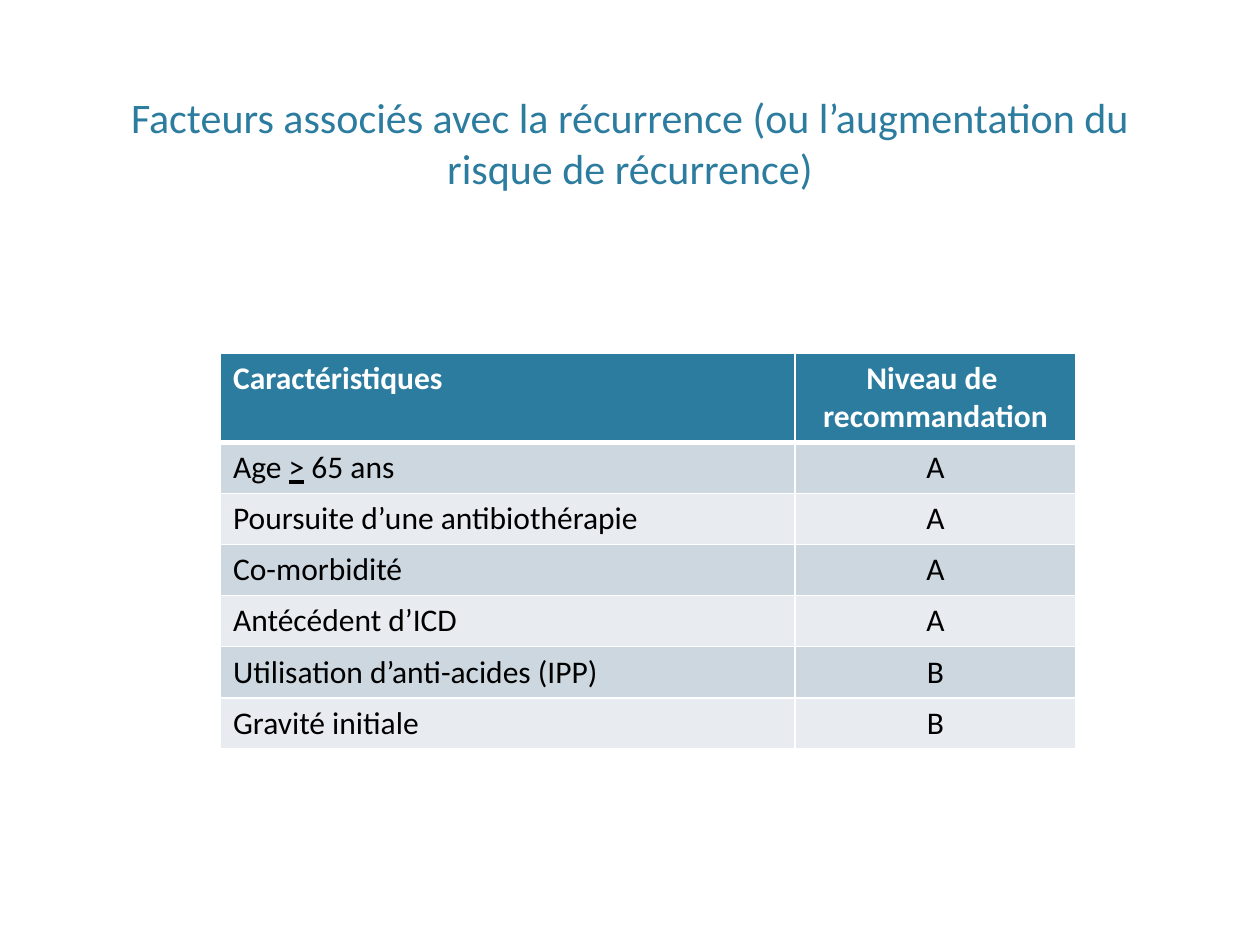
import pptx
import pptx.util
import pptx.dml.color
import pptx.enum.text
import pptx.oxml
import pptx.oxml.ns
from lxml import etree

Pt = pptx.util.Pt
Align = pptx.enum.text.PP_ALIGN
FONT = "Calibri"
COLORS = {
    "blue": "2C7C9F",
    "white": "FFFFFF",
    "black": "000000",
    "dark": "CDD7DF",
    "light": "E8ECF0",
}
HEAD = (["Caractéristiques"], ["Niveau de ", "recommandation"])
ROWS = [
    (["Age ", ">", " 65 ans"], "A"),
    (["Poursuite d’une antibiothérapie"], "A"),
    (["Co-morbidité"], "A"),
    (["Antécédent d’ICD"], "A"),
    (["Utilisation d’anti-acides (IPP)"], "B"),
    (["Gravité initiale"], "B"),
]


def rgb(name):
    return pptx.dml.color.RGBColor.from_string(COLORS[name])


def add_run(para, text, size, color, bold=False):
    run = para.add_run()
    run.text = text
    font = run.font
    font.name, font.size, font.bold = FONT, Pt(size), bold
    font.underline = text == ">"
    font.color.rgb = rgb(color)


def add_title(slide, box):
    title = slide.shapes.title
    title.left, title.top, title.width, title.height = map(Pt, box)
    frame = title.text_frame
    frame.word_wrap = True
    frame.auto_size = pptx.enum.text.MSO_AUTO_SIZE.NONE
    frame.vertical_anchor = pptx.enum.text.MSO_ANCHOR.BOTTOM
    para = frame.paragraphs[0]
    para.alignment = Align.CENTER
    add_run(
        para,
        "Facteurs associés avec la récurrence (ou l’augmentation du risque de récurrence)",
        24,
        "blue",
    )


def set_edges(cell, widths):
    props = cell._tc.get_or_add_tcPr()
    for spot, (side, width) in enumerate(widths.items()):
        line = etree.Element(pptx.oxml.ns.qn("a:ln" + side), w=str(Pt(width)))
        fill = etree.SubElement(line, pptx.oxml.ns.qn("a:solidFill"))
        etree.SubElement(fill, pptx.oxml.ns.qn("a:srgbClr"), val=COLORS["white"])
        props.insert(spot, line)


def fill_cell(cell, lines, align, fill, color, bold, top, base):
    cell.fill.solid()
    cell.fill.fore_color.rgb = rgb(fill)
    frame = cell.text_frame
    for spot, runs in enumerate(lines):
        para = frame.add_paragraph() if spot else frame.paragraphs[0]
        para.alignment = align
        for text in runs:
            add_run(para, text, 18, color, bold)
    set_edges(cell, {"L": 1, "R": 1, "T": top, "B": base})


def add_grid(slide, box):
    left, top, width, height = box
    head = 50.4
    table = slide.shapes.add_table(len(ROWS) + 1, 2, *map(Pt, box)).table
    first = 328.3
    for col, size in zip(table.columns, (first, width - first)):
        col.width = Pt(size)
    for spot, row in enumerate(table.rows):
        row.height = Pt((height - head) / len(ROWS) if spot else head)
    for col, (lines, align) in enumerate(zip(HEAD, (Align.LEFT, Align.CENTER))):
        fill_cell(table.cell(0, col), [[line] for line in lines], align,
                  "blue", "white", True, 1, 3)
    for spot, (label, level) in enumerate(ROWS, 1):
        fill = "dark" if spot % 2 else "light"
        edge = 3 if spot == 1 else 1
        for col, (runs, align) in enumerate(
            ((label, Align.LEFT), ([level], Align.CENTER))
        ):
            fill_cell(table.cell(spot, col), [runs], align,
                      fill, "black", False, edge, 1)


def main():
    deck = pptx.Presentation()
    deck.slide_width, deck.slide_height = Pt(720), Pt(540)
    slide = deck.slides.add_slide(deck.slide_layouts[5])
    slide.background.fill.solid()
    slide.background.fill.fore_color.rgb = rgb("white")
    add_title(slide, (43.2, 8.64, 633.6, 105.12))
    add_grid(slide, (126, 201.6, 488.9, 225.6))
    deck.save("out.pptx")


if __name__ == "__main__":
    main()
